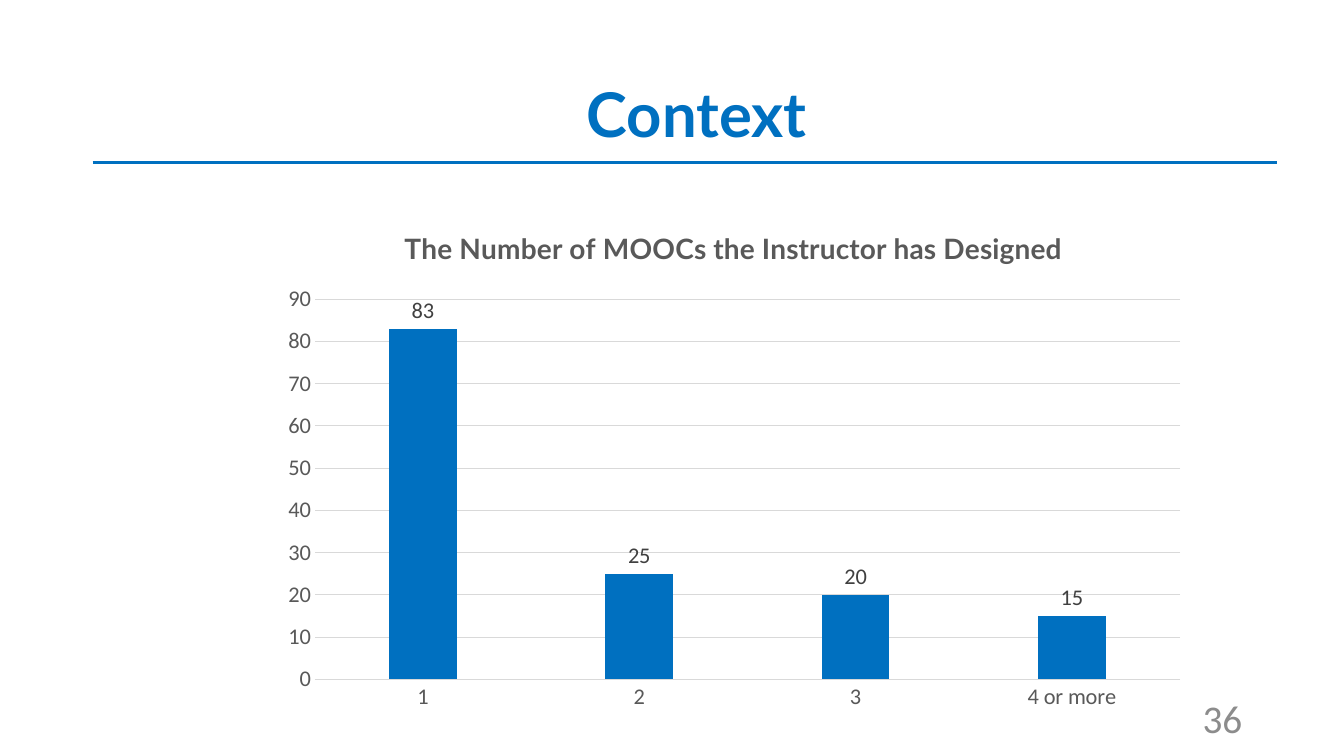
import dataclasses

import lxml.etree
import pptx
import pptx.chart.data
import pptx.dml.color
import pptx.enum.chart
import pptx.enum.shapes
import pptx.enum.text
import pptx.oxml.ns
import pptx.util

Inches = pptx.util.Inches
Pt = pptx.util.Pt
RGBColor = pptx.dml.color.RGBColor
Align = pptx.enum.text.PP_ALIGN
Chart = pptx.enum.chart
qn = pptx.oxml.ns.qn

BLUE = RGBColor(0x00, 0x70, 0xC0)
DARK = RGBColor(0x40, 0x40, 0x40)
GRAY = RGBColor(0x59, 0x59, 0x59)
MID = RGBColor(0x8C, 0x8C, 0x8C)
PALE = RGBColor(0xD9, 0xD9, 0xD9)


@dataclasses.dataclass(frozen=True)
class Style:
    size: float
    color: RGBColor
    face: str = "Calibri"
    bold: bool = False


@dataclasses.dataclass(frozen=True)
class Label:
    text: str
    box: tuple[float, float, float, float]
    align: Align
    style: Style


HEAD = Label("Context", (0.7, 0.44, 12.42, 1.45), Align.CENTER, Style(44, BLUE, "Lato", True))
PAGE = Label("36", (9.42, 6.95, 3, 0.4), Align.RIGHT, Style(28, MID))
TITLE = Style(20, GRAY, "Lato", True)
AXIS = Style(16, GRAY)
VALUE = Style(16, DARK)
PLOT = {"x": 0.05, "y": 0.18, "w": 0.93, "h": 0.74}


def set_font(font: pptx.text.text.Font, style: Style) -> None:
    font.size = Pt(style.size)
    font.name = style.face
    font.bold = style.bold
    font.color.rgb = style.color


def add_run(para, text: str, style: Style) -> None:
    run = para.add_run()
    run.text = text
    set_font(run.font, style)


def fill_label(shape, label: Label) -> None:
    shape.left, shape.top, shape.width, shape.height = map(Inches, label.box)
    frame = shape.text_frame
    frame.word_wrap = True
    frame.auto_size = pptx.enum.text.MSO_AUTO_SIZE.NONE
    frame.vertical_anchor = pptx.enum.text.MSO_ANCHOR.MIDDLE
    para = frame.paragraphs[0]
    para.alignment = label.align
    para.line_spacing = 0.9
    add_run(para, label.text, label.style)


def add_rule(slide) -> None:
    rule = slide.shapes.add_connector(
        pptx.enum.shapes.MSO_CONNECTOR.STRAIGHT,
        Inches(0.92), Inches(1.61), Inches(12.67), Inches(1.61),
    )
    rule.line.color.rgb = BLUE
    rule.line.width = Pt(2)
    lxml.etree.SubElement(rule._element.spPr, qn("a:effectLst"))


def set_line(line) -> None:
    line.color.rgb = PALE
    line.width = Pt(0.75)


def set_axis(axis) -> None:
    axis.major_tick_mark = Chart.XL_TICK_MARK.NONE
    axis.minor_tick_mark = Chart.XL_TICK_MARK.NONE
    set_font(axis.tick_labels.font, AXIS)


def set_plot(chart) -> None:
    area = chart._chartSpace.chart.plotArea
    for old in area.findall(qn("c:layout")):
        area.remove(old)
    outer = lxml.etree.Element(qn("c:layout"))
    inner = lxml.etree.SubElement(outer, qn("c:manualLayout"))
    modes = {"layoutTarget": "inner", "xMode": "edge", "yMode": "edge"}
    for name, value in (modes | PLOT).items():
        lxml.etree.SubElement(inner, qn(f"c:{name}")).set("val", str(value))
    area.insert(0, outer)


def add_bars(slide) -> None:
    data = pptx.chart.data.CategoryChartData(number_format="0")
    data.categories = ["1", "2", "3", "4 or more"]
    data.add_series("Series 1", (83, 25, 20, 15))
    chart = slide.shapes.add_chart(
        Chart.XL_CHART_TYPE.COLUMN_CLUSTERED,
        Inches(2.66), Inches(2.05), Inches(9.23), Inches(5.1), data,
    ).chart
    chart.font.size = Pt(10)
    chart.font.name = "Calibri"
    chart.has_legend = False
    chart.has_title = True
    head = chart.chart_title
    head.include_in_layout = False
    add_run(head.text_frame.paragraphs[0], "The Number of MOOCs the Instructor has Designed", TITLE)

    cats, vals = chart.category_axis, chart.value_axis
    set_axis(cats)
    set_axis(vals)
    set_line(cats.format.line)
    vals.format.line.fill.background()
    set_line(vals.major_gridlines.format.line)
    vals.minimum_scale, vals.maximum_scale, vals.major_unit = 0, 90, 10
    vals.tick_labels.number_format = "0"
    vals.tick_labels.number_format_is_linked = False

    plot = chart.plots[0]
    plot.gap_width = 219
    plot.overlap = -27
    plot.vary_by_categories = False
    bars = plot.series[0]
    bars.format.fill.solid()
    bars.format.fill.fore_color.rgb = BLUE
    tags = bars.data_labels
    tags.show_value = True
    tags.position = Chart.XL_LABEL_POSITION.OUTSIDE_END
    tags.number_format = "0"
    tags.number_format_is_linked = False
    set_font(tags.font, VALUE)
    set_plot(chart)


def main() -> None:
    deck = pptx.Presentation()
    deck.slide_width = Inches(13.33)
    deck.slide_height = Inches(7.5)
    slide = deck.slides.add_slide(deck.slide_layouts[5])
    fill_label(slide.shapes.title, HEAD)
    add_rule(slide)
    fill_label(slide.shapes.add_textbox(*map(Inches, PAGE.box)), PAGE)
    add_bars(slide)
    deck.save("out.pptx")


if __name__ == "__main__":
    main()
